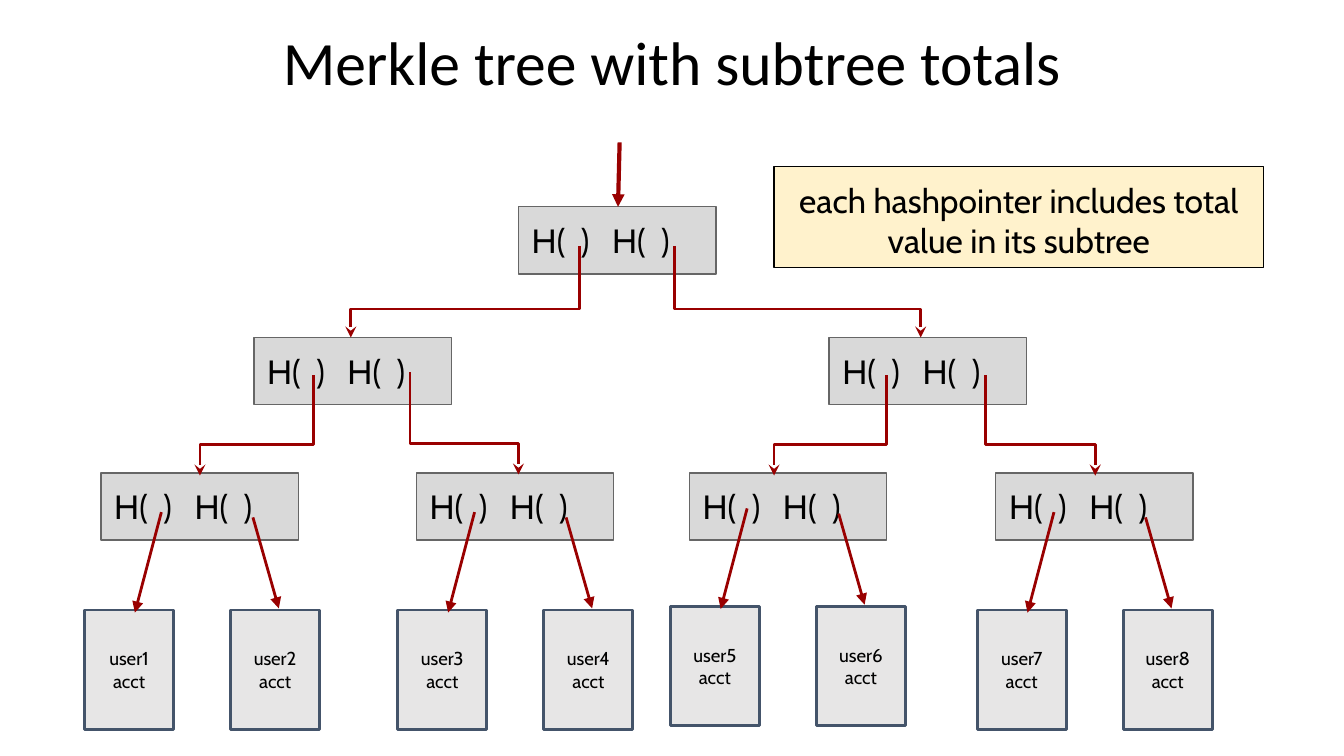
from dataclasses import dataclass

from lxml import etree
from pptx import Presentation
from pptx.dml.color import RGBColor
from pptx.enum.shapes import MSO_CONNECTOR, MSO_SHAPE
from pptx.enum.text import MSO_ANCHOR, PP_ALIGN
from pptx.oxml.ns import qn
from pptx.util import Cm, Pt

RECTANGLE = MSO_SHAPE.RECTANGLE
STRAIGHT = MSO_CONNECTOR.STRAIGHT
TOP, MIDDLE = MSO_ANCHOR.TOP, MSO_ANCHOR.MIDDLE
LEFT, CENTER = PP_ALIGN.LEFT, PP_ALIGN.CENTER

COLORS = {
    "text": "000000",
    "node": "D9D9D9",
    "node_edge": "666666",
    "account": "E7E6E6",
    "account_edge": "44546A",
    "note": "FFF2CC",
    "note_edge": "000000",
    "pointer": "990000",
}


@dataclass(frozen=True)
class BoxStyle:
    """Look of one kind of box."""

    fill: str
    edge: str
    edge_width: float
    size: float
    align: PP_ALIGN
    anchor: MSO_ANCHOR


@dataclass(frozen=True)
class Elbow:
    """Pointer that drops, turns at a level and drops again, in cm."""

    x: float
    y: float
    turn: float
    end_x: float
    end_y: float


@dataclass(frozen=True)
class Arrow:
    """Straight pointer, in cm."""

    x: float
    y: float
    end_x: float
    end_y: float


NODE = BoxStyle("node", "node_edge", 0.75, 18, LEFT, TOP)
ACCOUNT = BoxStyle("account", "account_edge", 1.5, 10, CENTER, MIDDLE)
NOTE = BoxStyle("note", "note_edge", 0.75, 18, CENTER, TOP)

NODE_SIZE = (3.73, 1.27)
NODE_ROWS = {3.91: (9.8,), 6.38: (4.8, 15.67), 8.94: (1.91, 7.87, 13.03, 18.82)}
ELBOWS = (
    Elbow(10.95, 4.65, 5.84, 6.63, 6.38),
    Elbow(12.75, 4.65, 5.84, 17.4, 6.38),
    Elbow(5.92, 7.09, 8.41, 3.78, 8.99),
    Elbow(7.75, 7.04, 8.38, 9.8, 8.97),
    Elbow(16.76, 7.09, 8.41, 14.63, 8.99),
    Elbow(18.62, 7.09, 8.41, 20.7, 8.99),
)

ACCOUNT_SIZE = (1.68, 2.26)
ACCOUNT_STEP = 2.76
ACCOUNT_PAIRS = ((1.6, 11.53), (7.52, 11.53), (12.67, 11.46), (18.47, 11.53))
PAIR_ARROWS = (Arrow(1.45, -1.85, 0.95, 0.05), Arrow(3.18, -1.75, 3.67, -0.03))


def rgb(name: str) -> RGBColor:
    """Return a named colour."""
    return RGBColor.from_string(COLORS[name])


def write(frame, text: str, font: str, size: float, align: PP_ALIGN, anchor: MSO_ANCHOR) -> None:
    """Fill a text frame and format its runs."""
    frame.text = text
    frame.word_wrap = True
    frame.vertical_anchor = anchor
    frame.margin_left = frame.margin_right = Cm(0.25)
    frame.margin_top = frame.margin_bottom = Cm(0.25)
    for paragraph in frame.paragraphs:
        paragraph.alignment = align
        for run in paragraph.runs:
            run.font.name = font
            run.font.size = Pt(size)
            run.font.color.rgb = rgb("text")


def add_box(slide, x: float, y: float, size: tuple[float, float], text: str, style: BoxStyle) -> None:
    """Draw a filled box with text."""
    box = slide.shapes.add_shape(RECTANGLE, Cm(x), Cm(y), *map(Cm, size))
    box.shadow.inherit = False
    box.fill.solid()
    box.fill.fore_color.rgb = rgb(style.fill)
    box.line.color.rgb = rgb(style.edge)
    box.line.width = Pt(style.edge_width)
    write(box.text_frame, text, "Cabin", style.size, style.align, style.anchor)


def style_pointer(pointer, width: float, head: str) -> None:
    """Give a pointer its line and arrowhead, without a shadow."""
    pointer.line.color.rgb = rgb("pointer")
    pointer.line.width = Pt(width)
    properties = pointer._element.spPr
    etree.SubElement(properties.find(qn("a:ln")), qn("a:tailEnd"), type=head)
    etree.SubElement(properties, qn("a:effectLst"))


def add_arrow(slide, arrow: Arrow, width: float, x: float = 0, y: float = 0) -> None:
    """Draw a straight pointer shifted by x and y."""
    pointer = slide.shapes.add_connector(
        STRAIGHT, Cm(x + arrow.x), Cm(y + arrow.y), Cm(x + arrow.end_x), Cm(y + arrow.end_y)
    )
    style_pointer(pointer, width, "triangle")


def add_elbow(slide, elbow: Elbow) -> None:
    """Draw a pointer with two right-angled turns."""
    builder = slide.shapes.build_freeform(Cm(elbow.x), Cm(elbow.y))
    corners = ((elbow.x, elbow.turn), (elbow.end_x, elbow.turn), (elbow.end_x, elbow.end_y))
    builder.add_line_segments([(Cm(x), Cm(y)) for x, y in corners], close=False)
    pointer = builder.convert_to_shape()
    pointer.fill.background()
    style_pointer(pointer, 1.5, "stealth")


def main() -> None:
    """Build the slide and save it."""
    deck = Presentation()
    deck.slide_width, deck.slide_height = Cm(25.4), Cm(14.29)
    slide = deck.slides.add_slide(deck.slide_layouts[6])

    title = slide.shapes.add_textbox(Cm(1.27), Cm(0.36), Cm(22.86), Cm(1.9)).text_frame
    write(title, "Merkle tree with subtree totals", "Calibri", 33, CENTER, TOP)
    title.paragraphs[0].line_spacing = 0.9

    for y, row in NODE_ROWS.items():
        for x in row:
            add_box(slide, x, y, NODE_SIZE, "H(  )   H(  )", NODE)
    for elbow in ELBOWS:
        add_elbow(slide, elbow)

    for pair, (x, y) in enumerate(ACCOUNT_PAIRS):
        for side, arrow in enumerate(PAIR_ARROWS):
            user = 2 * pair + side + 1
            add_box(slide, x + side * ACCOUNT_STEP, y, ACCOUNT_SIZE, f"user{user}\nacct", ACCOUNT)
            add_arrow(slide, arrow, 1.5, x, y)

    add_arrow(slide, Arrow(11.71, 2.69, 11.68, 3.91), 2.25)
    add_box(slide, 14.63, 3.15, (9.25, 1.91), "each hashpointer includes total value in its subtree", NOTE)

    deck.save("out.pptx")


if __name__ == "__main__":
    main()
